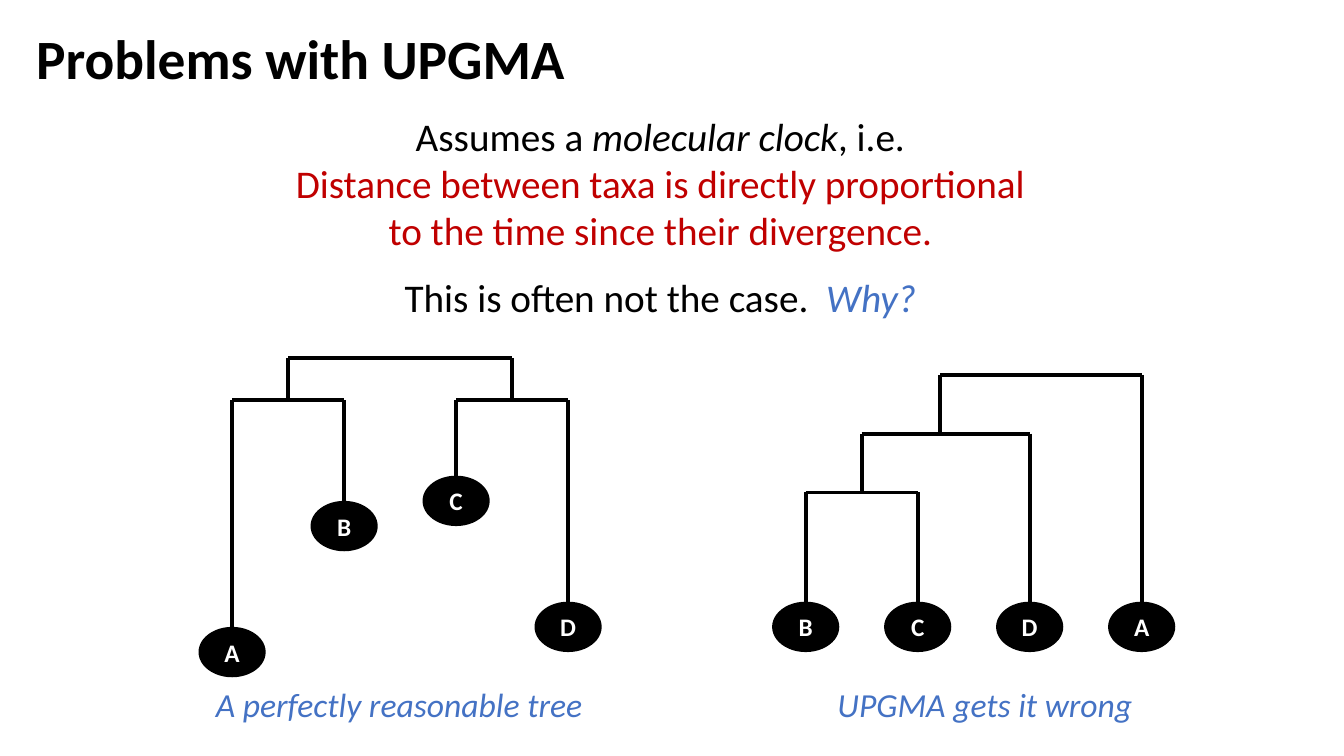
from dataclasses import dataclass

from lxml import etree
from pptx import Presentation
from pptx.dml.color import RGBColor
from pptx.enum.shapes import MSO_CONNECTOR as Conn, MSO_SHAPE as Shape
from pptx.enum.text import MSO_ANCHOR as Anchor, PP_ALIGN as Align
from pptx.oxml.ns import qn
from pptx.util import Pt


@dataclass(frozen=True)
class Theme:
    font: str = "Calibri"
    black: RGBColor = RGBColor(0, 0, 0)
    white: RGBColor = RGBColor(255, 255, 255)
    red: RGBColor = RGBColor(0xC0, 0, 0)
    blue: RGBColor = RGBColor(0x44, 0x72, 0xC4)
    title: float = 39.6
    body: float = 28
    caption: float = 24
    leaf: float = 18
    branch: float = 2.75


T = Theme()
COLUMN = 80
LEAF_W, LEAF_H = 48, 36


@dataclass
class Leaf:
    """A taxon: its column in the tree and the depth of its top."""
    name: str
    column: int
    depth: float


@dataclass
class Join:
    """Two subtrees under one bar; shift moves the stem off the bar's middle."""
    depth: float
    left: object
    right: object
    shift: float = 0


def add_run(p, text, size, color, bold=False, italic=False):
    r = p.add_run()
    r.text = text
    r.font.name, r.font.size = T.font, Pt(size)
    r.font.color.rgb = color
    r.font.bold, r.font.italic = bold, italic


def add_text_box(slide, box, wrap=True):
    tf = slide.shapes.add_textbox(*map(Pt, box)).text_frame
    tf.word_wrap = wrap
    return tf


def add_title(slide, box, text):
    tf = add_text_box(slide, box)
    tf.vertical_anchor = Anchor.MIDDLE
    p = tf.paragraphs[0]
    p.line_spacing = 0.9
    add_run(p, text, T.title, T.black, bold=True)


def add_body(slide, box, lines):
    """Each line is (space before, [(text, color, italic), ...])."""
    tf = add_text_box(slide, box)
    for i, (space, runs) in enumerate(lines):
        p = tf.paragraphs[0] if i == 0 else tf.add_paragraph()
        p.alignment = Align.CENTER
        if space:
            p.space_before = Pt(space)
        for text, color, italic in runs:
            add_run(p, text, T.body, color, italic=italic)


def add_branch(shapes, x1, y1, x2, y2):
    line = shapes.add_connector(Conn.STRAIGHT, Pt(x1), Pt(y1), Pt(x2), Pt(y2))
    line.line.color.rgb = T.black
    line.line.width = Pt(T.branch)
    etree.SubElement(line._element.spPr, qn("a:effectLst"))
    return line


def add_leaf(shapes, x, y, name):
    sp = shapes.add_shape(Shape.OVAL, Pt(x - LEAF_W / 2), Pt(y), Pt(LEAF_W), Pt(LEAF_H))
    sp.shadow.inherit = False
    sp.fill.solid()
    sp.fill.fore_color.rgb = T.black
    sp.line.fill.background()
    tf = sp.text_frame
    tf.margin_left = tf.margin_right = tf.margin_top = tf.margin_bottom = 0
    tf.vertical_anchor = Anchor.MIDDLE
    p = tf.paragraphs[0]
    p.alignment = Align.CENTER
    add_run(p, name, T.leaf, T.white, bold=True)
    return sp


def add_subtree(shapes, left, top, node):
    """Draw node and all below it; return its stem x, its y and its oval, if any."""
    y = top + node.depth
    if isinstance(node, Leaf):
        x = left + node.column * COLUMN
        return x, y, add_leaf(shapes, x, y, node.name)
    ends = [add_subtree(shapes, left, top, child) for child in (node.left, node.right)]
    (x1, *_), (x2, *_) = ends
    add_branch(shapes, x1, y, x2, y)
    for x, end_y, oval in ends:
        stem = add_branch(shapes, x, y, x, end_y)
        if oval is not None:
            stem.end_connect(oval, 0)
    return (x1 + x2) / 2 + node.shift, y, None


def add_tree_panel(slide, box, tree, caption, caption_w, caption_shift):
    """Tree from the top of the box, caption along its bottom."""
    left, top, width, height = box
    add_subtree(slide.shapes.add_group_shape().shapes, left, top, tree)
    caption_h = 36
    caption_x = left + (width - caption_w) / 2 + caption_shift
    tf = add_text_box(slide, (caption_x, top + height - caption_h, caption_w, caption_h),
                      wrap=False)
    add_run(tf.paragraphs[0], caption, T.caption, T.blue, italic=True)


def main():
    prs = Presentation()
    prs.slide_width, prs.slide_height = Pt(960), Pt(540)
    slide = prs.slides.add_slide(prs.slide_layouts[6])

    add_title(slide, (18.7, 18, 922, 52), "Problems with UPGMA")
    add_body(slide, (23.8, 76.3, 895.7, 157.7), [
        (0, [("Assumes a ", T.black, False), ("molecular clock", T.black, True),
             (", i.e.", T.black, False)]),
        (0, [("Distance between taxa is directly proportional", T.red, False)]),
        (0, [("to the time since their divergence.", T.red, False)]),
        (14.6, [("This is often not the case.  ", T.black, False),
                ("Why?", T.blue, True)]),
    ])

    true_tree = Join(0, Join(30, Leaf("A", 0, 192), Leaf("B", 1, 102)),
                     Join(30, Leaf("C", 2, 84), Leaf("D", 3, 174)))
    upgma_tree = Join(0, Join(42, Join(84, Leaf("B", 0, 162), Leaf("C", 1, 162)),
                              Leaf("D", 2, 162), shift=-4),
                      Leaf("A", 3, 162))
    width = 3 * COLUMN
    add_tree_panel(slide, (165.8, 255.8, width, 265.5), true_tree,
                   "A perfectly reasonable tree", 279.4, 1)
    add_tree_panel(slide, (575.5, 267.8, width, 253.5), upgma_tree,
                   "UPGMA gets it wrong", 226.8, 9)

    prs.save("out.pptx")


if __name__ == "__main__":
    main()
